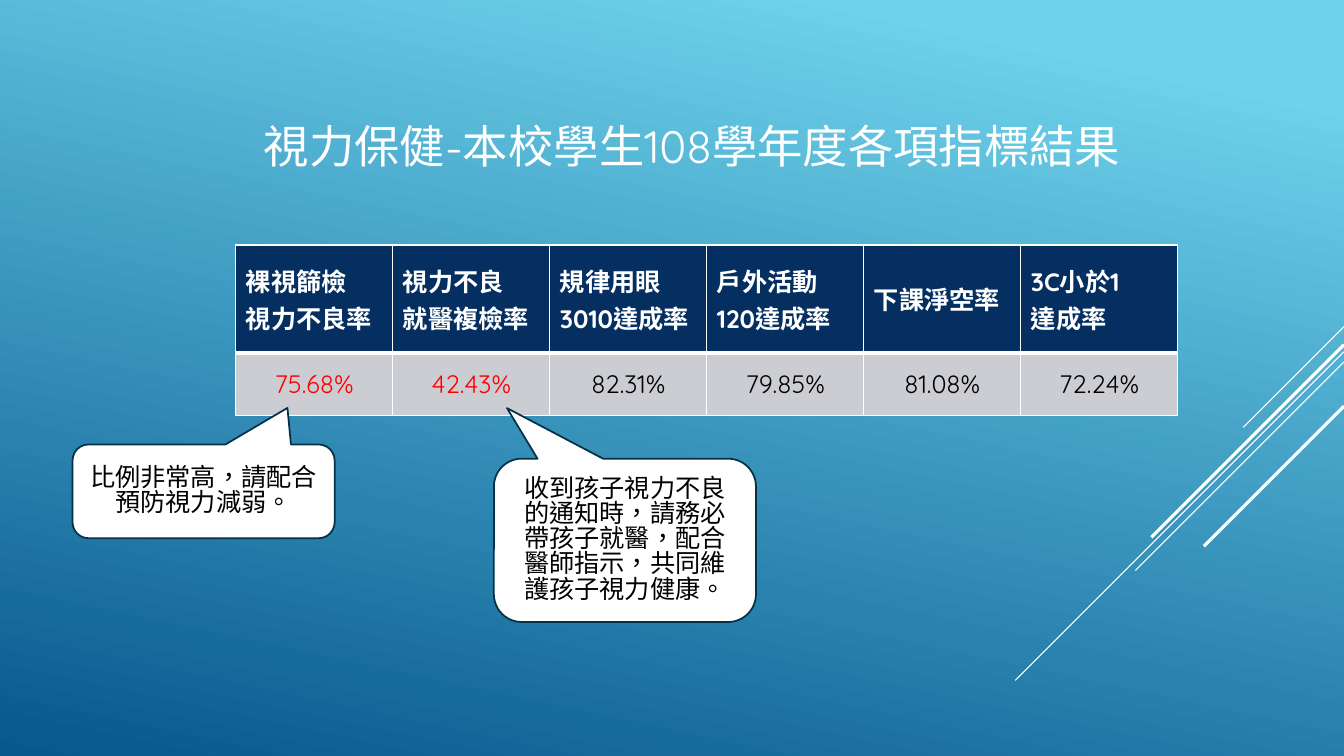
"""Build the school eyesight indicator slide."""
import pptx
import pptx.dml.color
import pptx.enum.shapes
import pptx.enum.text
import pptx.oxml
import pptx.oxml.ns
import pptx.util

RGBColor = pptx.dml.color.RGBColor
WHITE = RGBColor(0xFF, 0xFF, 0xFF)
BLACK = RGBColor(0, 0, 0)
RED = RGBColor(0xFF, 0, 0)
NAVY = RGBColor(0x05, 0x2F, 0x61)
GREY = RGBColor(0xCC, 0xCD, 0xD2)
OUTLINE = RGBColor(0x04, 0x31, 0x48)
SKY = RGBColor(0x6E, 0xD2, 0xEB)
OCEAN = RGBColor(0x06, 0x58, 0x8E)

SLIDE_WIDTH = pptx.util.Inches(13.333)
SLIDE_HEIGHT = pptx.util.Inches(7.5)
LATIN_FONT = "Quicksand"
ASIAN_FONT = "Noto Sans CJK JP"
CENTER = pptx.enum.text.PP_ALIGN.CENTER
LEFT = pptx.enum.text.PP_ALIGN.LEFT
MIDDLE = pptx.enum.text.MSO_ANCHOR.MIDDLE

TITLE = "視力保健-本校學生108學年度各項指標結果"
INDICATORS = [
    ("裸視篩檢\n視力不良率", "75.68%", RED),
    ("視力不良\n就醫複檢率", "42.43%", RED),
    ("規律用眼3010達成率", "82.31%", BLACK),
    ("戶外活動120達成率", "79.85%", BLACK),
    ("下課淨空率", "81.08%", BLACK),
    ("3C小於1\n達成率", "72.24%", BLACK),
]
CALLOUTS = [
    ("收到孩子視力不良的通知時，請務必帶孩子就醫，配合醫師指示，共同維護孩子視力健康。",
     (36.75, 60.67, 19.5, 21.6), (-0.45, -0.81, 0.17)),
    ("比例非常高，請配合預防視力減弱。",
     (5.4, 58.8, 19.5, 12.4), (0.32, -0.89, 0.17)),
]
DIAGONALS = [
    (43.2, 13.33, 0.75),
    (46.53, 43.47, 0.75),
    (47.87, 27.6, 0.75),
    (45.6, 25.47, 2.25),
    (53.73, 18.53, 2.25),
]


def across(percent):
    """Return a share of the slide width."""
    return round(SLIDE_WIDTH * percent / 100)


def down(percent):
    """Return a share of the slide height."""
    return round(SLIDE_HEIGHT * percent / 100)


def box(left, top, width, height):
    """Return a rectangle given in percent as slide lengths."""
    return across(left), down(top), across(width), down(height)


def write(text_frame, text, color, size=18, bold=False, alignment=CENTER, spacing=1.0):
    """Fill a text frame with one formatted paragraph per line."""
    text_frame.text = text
    font_format = {"name": LATIN_FONT, "size": pptx.util.Pt(size), "bold": bold}
    for paragraph in text_frame.paragraphs:
        paragraph.alignment = alignment
        paragraph.line_spacing = spacing
        for run in paragraph.runs:
            for attribute, value in font_format.items():
                setattr(run.font, attribute, value)
            run.font.color.rgb = color
            properties = run._r.get_or_add_rPr()
            properties.set("lang", "zh-TW")
            asian = pptx.oxml.parse_xml(
                f'<a:ea {pptx.oxml.ns.nsdecls("a")} typeface="{ASIAN_FONT}"/>')
            properties.find(pptx.oxml.ns.qn("a:latin")).addnext(asian)


def paint_background(slide):
    """Give the slide its slanted blue gradient."""
    fill = slide.background.fill
    fill.gradient()
    fill.gradient_angle = 258
    for stop, position, color in zip(fill.gradient_stops, (0.1, 1.0), (SKY, OCEAN)):
        stop.position = position
        stop.color.rgb = color


def add_diagonal(slide, top, rise, weight):
    """Draw a 45 degree line from the right edge down to the left."""
    connector = slide.shapes.add_connector(
        pptx.enum.shapes.MSO_CONNECTOR.STRAIGHT,
        SLIDE_WIDTH, down(top), SLIDE_WIDTH - down(rise), down(top + rise))
    connector.line.color.rgb = WHITE
    connector.line.width = pptx.util.Pt(weight)
    connector._element.spPr.append(
        pptx.oxml.parse_xml(f'<a:effectLst {pptx.oxml.ns.nsdecls("a")}/>'))


def place_title(slide):
    """Move and format the title placeholder."""
    title = slide.shapes.title
    for attribute, value in zip(("left", "top", "width", "height"),
                                box(17.55, 14.93, 67.89, 9.6)):
        setattr(title, attribute, value)
    frame_format = {"auto_size": pptx.enum.text.MSO_AUTO_SIZE.NONE,
                    "vertical_anchor": MIDDLE, "word_wrap": True}
    for attribute, value in frame_format.items():
        setattr(title.text_frame, attribute, value)
    write(title.text_frame, TITLE, WHITE, size=32.4, spacing=0.85)


def style_cell(cell, fill_color, bottom_weight):
    """Set the white borders, fill and anchor of a table cell."""
    properties = cell._tc.get_or_add_tcPr()
    for side, weight in zip("LRTB", (1, 1, 1, bottom_weight)):
        properties.append(pptx.oxml.parse_xml(
            f'<a:ln{side} {pptx.oxml.ns.nsdecls("a")} w="{pptx.util.Pt(weight)}">'
            f'<a:solidFill><a:srgbClr val="{WHITE}"/></a:solidFill></a:ln{side}>'))
    cell.fill.solid()
    cell.fill.fore_color.rgb = fill_color
    cell.vertical_anchor = MIDDLE


def add_indicator_table(slide):
    """Add the table of indicator names and rates."""
    table = slide.shapes.add_table(
        2, len(INDICATORS), *box(17.55, 32.4, 70.1, 22.54)).table
    table.horz_banding = False
    for row, height in zip(table.rows, (14.27, 8.27)):
        row.height = down(height)
    for column, (name, rate, color) in enumerate(INDICATORS):
        header, value = table.cell(0, column), table.cell(1, column)
        style_cell(header, NAVY, 3)
        style_cell(value, GREY, 1)
        write(header.text_frame, name, WHITE, bold=True, alignment=LEFT)
        write(value.text_frame, rate, color)


def add_callout(slide, text, area, adjustments):
    """Add a white rounded callout with its note."""
    callout = slide.shapes.add_shape(
        pptx.enum.shapes.MSO_SHAPE.ROUNDED_RECTANGULAR_CALLOUT, *box(*area))
    for index, adjustment in enumerate(adjustments):
        callout.adjustments[index] = adjustment
    callout.shadow.inherit = False
    callout.fill.solid()
    callout.fill.fore_color.rgb = WHITE
    callout.line.color.rgb = OUTLINE
    callout.line.width = pptx.util.Pt(1.25)
    callout.text_frame.word_wrap = True
    callout.text_frame.vertical_anchor = MIDDLE
    write(callout.text_frame, text, BLACK, spacing=0.83)


def main():
    """Build and save the presentation."""
    presentation = pptx.Presentation()
    presentation.slide_width = SLIDE_WIDTH
    presentation.slide_height = SLIDE_HEIGHT
    slide = presentation.slides.add_slide(presentation.slide_layouts[5])
    paint_background(slide)
    for diagonal in DIAGONALS:
        add_diagonal(slide, *diagonal)
    place_title(slide)
    add_indicator_table(slide)
    for callout in CALLOUTS:
        add_callout(slide, *callout)
    presentation.save("out.pptx")


if __name__ == "__main__":
    main()
